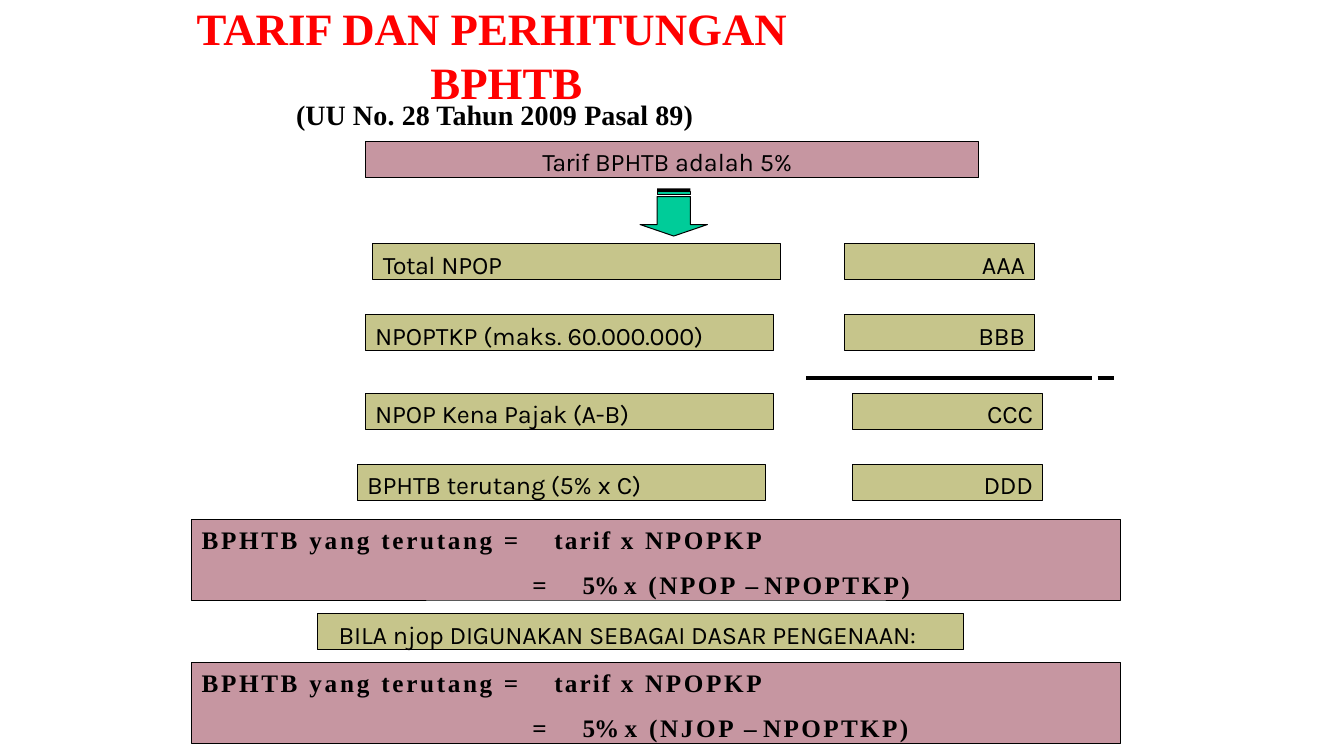
"""Build the slide on BPHTB rates and how the tax is calculated."""
from lxml import etree
from pptx import Presentation
from pptx.dml.color import RGBColor
from pptx.enum.shapes import MSO_CONNECTOR, MSO_SHAPE
from pptx.enum.text import MSO_ANCHOR, MSO_AUTO_SIZE, PP_ALIGN
from pptx.oxml.ns import qn
from pptx.util import Pt

RECTANGLE, STRAIGHT = MSO_SHAPE.RECTANGLE, MSO_CONNECTOR.STRAIGHT
LEFT, RIGHT = PP_ALIGN.LEFT, PP_ALIGN.RIGHT
COLORS = {"red": "FF0000", "black": "000000", "pink": "C696A1",
          "olive": "C6C58B", "green": "00CC99"}
RGB = {name: RGBColor.from_string(value) for name, value in COLORS.items()}
FRAME = {"word_wrap": True, "auto_size": MSO_AUTO_SIZE.NONE,
         "vertical_anchor": MSO_ANCHOR.TOP, "margin_left": 0,
         "margin_right": 0, "margin_top": Pt(3.6), "margin_bottom": 0}
KARLA = {"name": "Karla", "size": Pt(18), "bold": False}
TIMES = {"name": "Times New Roman", "size": Pt(18), "bold": True}


def write(shape, paragraphs, font, color="black", align=LEFT, **frame):
    """Fill a shape with paragraphs of (margin, hanging, tabs, space before, runs)."""
    text_frame = shape.text_frame
    for key, value in {**FRAME, **frame}.items():
        setattr(text_frame, key, value)
    for number, (margin, hanging, tabs, before, runs) in enumerate(paragraphs):
        paragraph = text_frame.add_paragraph() if number else text_frame.paragraphs[0]
        properties = paragraph._p.get_or_add_pPr()
        properties.set("marL", str(Pt(margin)))
        properties.set("indent", str(-Pt(hanging)))
        if tabs:
            tab_list = etree.SubElement(properties, qn("a:tabLst"))
            for stop in tabs:
                etree.SubElement(tab_list, qn("a:tab"), pos=str(Pt(stop)), algn="l")
        paragraph.alignment = align
        paragraph.space_before = Pt(before)
        for words, spacing in runs:
            run = paragraph.add_run()
            run.text = words
            for key, value in font.items():
                setattr(run.font, key, value)
            run.font.color.rgb = RGB[color]
            run.font._element.set("spc", str(round(spacing * 100)))


def paint(shape, fill, line=True):
    """Give a shape its fill and thin black outline."""
    shape.shadow.inherit = False
    shape.fill.solid()
    shape.fill.fore_color.rgb = RGB[fill]
    if line:
        shape.line.color.rgb = RGB["black"]
        shape.line.width = Pt(0.72)
    else:
        shape.line.fill.background()
    return shape


presentation = Presentation()
presentation.slide_width, presentation.slide_height = Pt(960), Pt(540)
slide = presentation.slides.add_slide(presentation.slide_layouts[5])
shapes = slide.shapes

title = shapes.title
title.left, title.top, title.width, title.height = Pt(140), Pt(0), Pt(428), Pt(78.5)
write(title, [(167.5, 167, (), 0, [("TARIF DAN PERHITUNGAN BPHTB", 0)])],
      {**TIMES, "size": Pt(32)}, "red", margin_top=Pt(0.7))

law = shapes.add_textbox(Pt(210.5), Pt(69.2), Pt(286.5), Pt(25))
write(law, [(1, 0, (), 0, [("(UU ", 0), ("No. ", 0.1), ("28 Tahun ", 0),
                           ("2009 ", 0.1), ("Pasal ", 0), ("89)", 0.1)])],
      {**TIMES, "size": Pt(20)}, margin_top=Pt(0.7))

labels = [
    (260.8, 101.2, 438.5, "pink", 126.7,
     [("Tarif ", -0.4), ("BPHTB ", -0.1), ("adalah ", 0), ("5%", -0.1)]),
    (266.3, 174.3, 291.6, "olive", 7.2, [("Total", -0.4), (" NPOP", -0.1)]),
    (260.8, 225, 291.6, "olive", 7.2,
     [("NPOPTKP ", -0.1), ("(maks. ", 0), ("60.000.000)", -0.1)]),
    (260.8, 281.2, 291.6, "olive", 7.2,
     [("NPOP ", -0.1), ("Kena ", -0.2), ("Pajak (A-B)", -0.1)]),
    (255, 331.9, 291.6, "olive", 7.2,
     [("BPHTB terutang (5% ", -0.1), ("x ", 0), ("C)", -0.1)]),
    (226.8, 438.5, 461.5, "olive", 15.1,
     [("BILA njop DIGUNAKAN SEBAGAI DASAR PENGENAAN:", -0.1)]),
]
for left, top, width, fill, margin, runs in labels:
    label = shapes.add_shape(RECTANGLE, Pt(left), Pt(top), Pt(width), Pt(25.5))
    write(paint(label, fill), [(margin, 0, (), 0, runs)], KARLA)

for left, top, amount in [(603.4, 174.3, "AAA"), (603.4, 225, "BBB"),
                          (609.1, 281.2, "CCC"), (609.1, 331.9, "DDD")]:
    value = shapes.add_shape(RECTANGLE, Pt(left), Pt(top), Pt(135.4), Pt(25.5))
    write(paint(value, "olive"), [(0, 0, (), 0, [(amount, -0.1)])], KARLA,
          align=RIGHT, margin_right=Pt(6.6))

arrow_outline = [(505.4, 160.4), (493.2, 160.4), (493.2, 140.4), (469.4, 140.4),
                 (469.4, 160.4), (457.2, 160.4), (481.3, 168.6)]
arrow = shapes.build_freeform(*map(Pt, arrow_outline[0]))
arrow.add_line_segments([tuple(map(Pt, point)) for point in arrow_outline[1:]])
paint(arrow.convert_to_shape(), "green")
for top, height, fill, outlined in [(136.8, 2.2, "green", True),
                                    (134.6, 1.8, "black", False)]:
    band = shapes.add_shape(RECTANGLE, Pt(469.4), Pt(top), Pt(23.8), Pt(height))
    paint(band, fill, outlined)

for start, end in [(576, 779.8), (784, 795.8)]:
    rule = shapes.add_connector(STRAIGHT, Pt(start), Pt(270), Pt(end), Pt(270))
    rule.line.color.rgb = RGB["black"]
    rule.line.width = Pt(3)
    etree.SubElement(rule._element.spPr, qn("a:effectLst"))

for top, basis, spacings in [(370.8, "(NPOP ", (-0.9, 1.9, 1.8)),
                             (473, "(NJOP ", (-0.8, 2, 1.9))]:
    formula = shapes.add_shape(RECTANGLE, Pt(136.8), Pt(top), Pt(663.8), Pt(57.8))
    rate = list(zip(("5% ", "x ", basis), spacings))
    write(paint(formula, "pink"), [
        (7.2, 0, (224.6, 246.2), 0,
         [("BPHTB ", 1.9), ("yang ", 2), ("terutang\t", 1.9), ("=\t", 0.7),
          ("tarif ", 1.5), ("x NPOPKP", 1.9)]),
        (243.4, 0, (270,), 10.8,
         [("=\t", 0.7), *rate, ("– ", 0), ("NPOPTKP)", 1.7)]),
    ], TIMES)

presentation.save("out.pptx")
